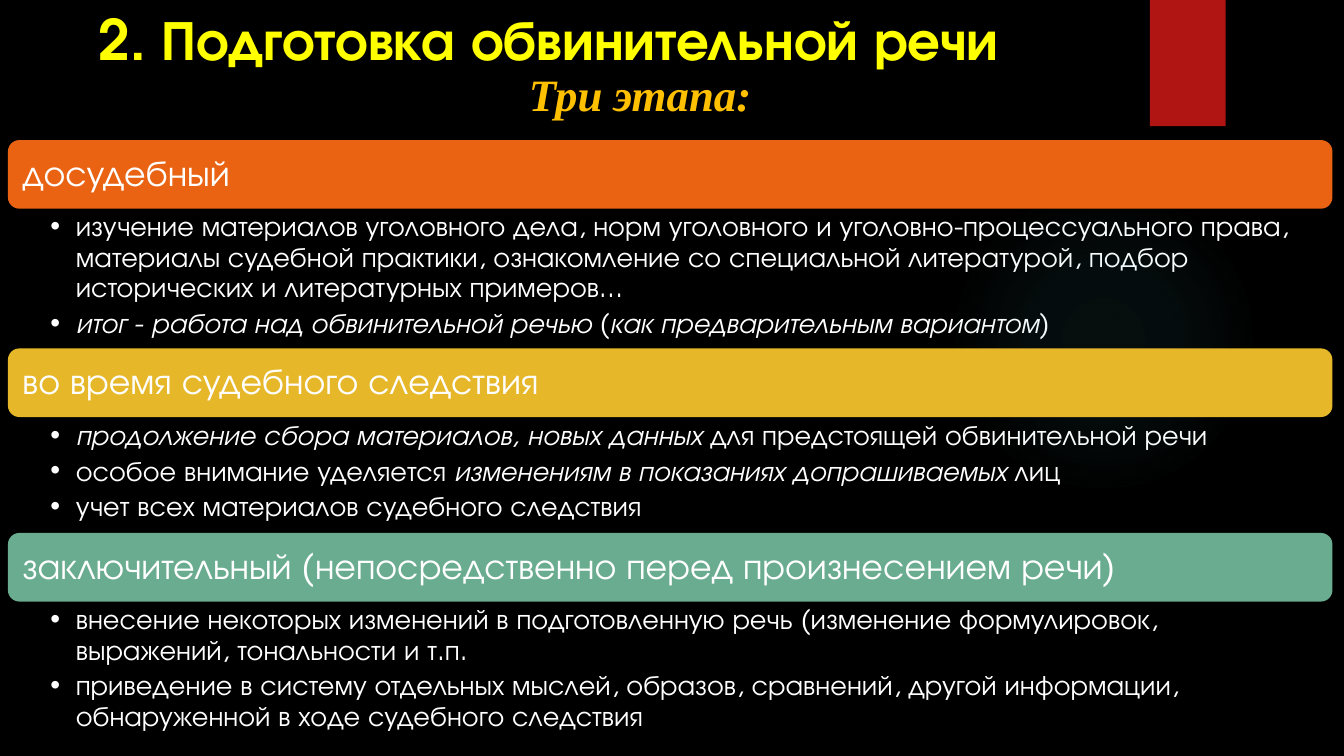
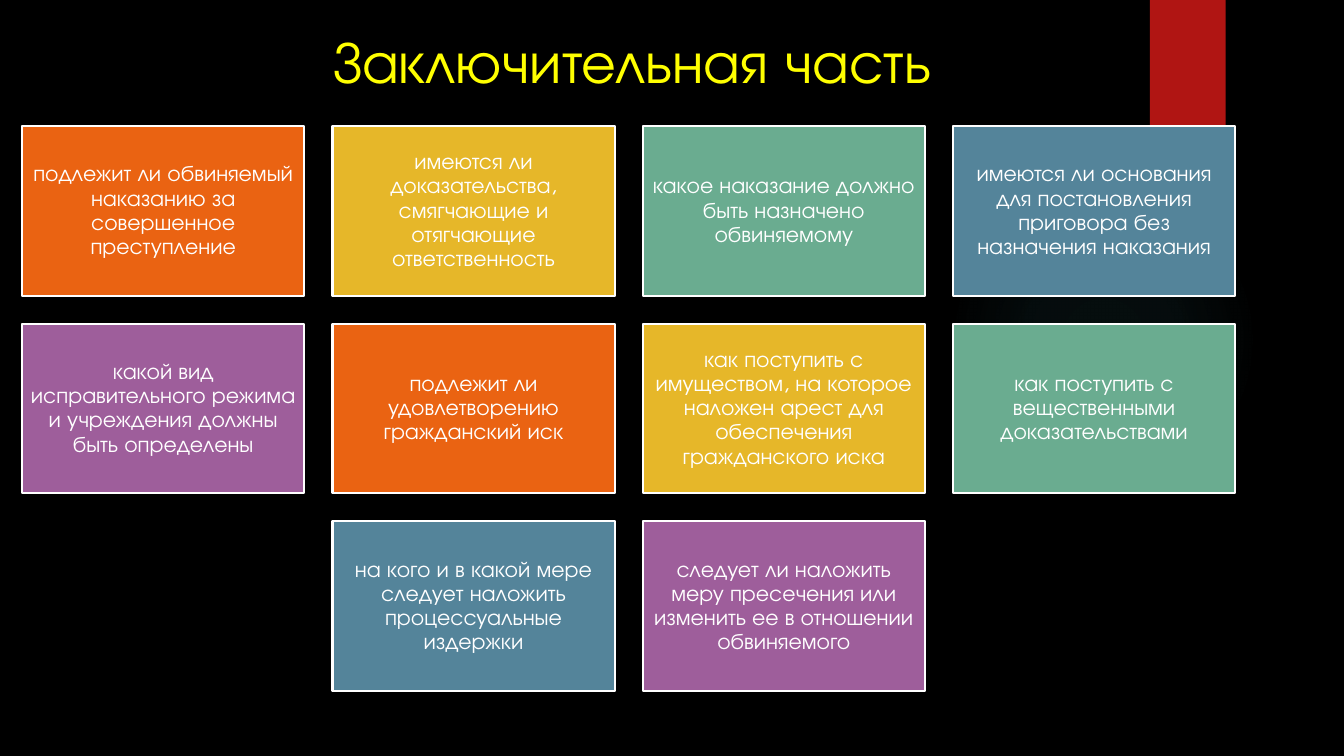
"""Build two slides on preparing and closing a prosecution speech."""
import dataclasses
import itertools
import typing

import pptx
import pptx.dml.color
import pptx.enum.shapes
import pptx.enum.text
import pptx.oxml
import pptx.oxml.ns
import pptx.presentation
import pptx.shapes.autoshape
import pptx.slide
import pptx.text.text
import pptx.util

Cm = pptx.util.Cm
Align = pptx.enum.text.PP_ALIGN
Anchor = pptx.enum.text.MSO_ANCHOR
Preset = pptx.enum.shapes.MSO_SHAPE


@dataclasses.dataclass(frozen=True)
class Theme:
    """Colours, fonts and type sizes of the deck."""
    background: str = "000000"
    text: str = "FFFFFF"
    title: str = "FFFF00"
    subtitle: str = "FFC000"
    ribbon: str = "B01513"
    glow: str = "50B9C1"
    accents: tuple[str, ...] = ("EA6312", "E6B729", "6AAC90", "54849A", "9E5E9B")
    font: str = "TeX Gyre Adventor"
    subtitle_font: str = "Times New Roman"
    subtitle_size: int = 32
    band_size: int = 26
    list_size: int = 20
    cell_size: int = 16


@dataclasses.dataclass(frozen=True)
class Area:
    """Position and size in centimetres."""
    left: float
    top: float
    width: float
    height: float

    def lengths(self) -> tuple[pptx.util.Length, ...]:
        """Return left, top, width and height as lengths."""
        return Cm(self.left), Cm(self.top), Cm(self.width), Cm(self.height)


@dataclasses.dataclass(frozen=True)
class Stage:
    """A stage of work; asterisks enclose the italic spans of its points."""
    name: str
    list_height: float
    placeholder: int
    points: tuple[str, ...]


THEME = Theme()
COMPARISON_LAYOUT = 4
TITLE_LAYOUT = 5
SUBTITLE_PLACEHOLDER = 3
BAND_LEFT, BAND_TOP, BAND_WIDTH, BAND_HEIGHT = 0.2, 3.53, 33.38, 1.73
GRID_LEFT, GRID_TOP, GRID_COLUMNS = 0.56, 3.18, 4
CELL_WIDTH, CELL_HEIGHT, CELL_GAP = 7.11, 4.27, 0.71

STAGES = (
    Stage("досудебный", 3.52, 1, (
        "изучение материалов уголовного дела, норм уголовного и "
        "уголовно-процессуального права, материалы судебной практики, "
        "ознакомление со специальной литературой, подбор исторических и "
        "литературных примеров…",
        "*итог - работа над обвинительной речью (как предварительным вариантом)*",
    )),
    Stage("во время судебного следствия", 2.92, 2, (
        "*продолжение сбора материалов, новых данных* для предстоящей "
        "обвинительной речи",
        "особое внимание уделяется *изменениям в показаниях допрашиваемых* лиц",
        "учет всех материалов судебного следствия",
    )),
    Stage("заключительный (непосредственно перед произнесением речи)", 3.52, 4, (
        "внесение некоторых изменений в подготовленную речь (изменение "
        "формулировок, выражений, тональности и т.п.",
        "приведение в систему отдельных мыслей, образов, сравнений, другой "
        "информации, обнаруженной в ходе судебного следствия",
    )),
)

QUESTIONS = (
    "подлежит ли обвиняемый наказанию за совершенное преступление",
    "имеются ли доказательства, смягчающие и отягчающие ответственность",
    "какое наказание должно быть назначено обвиняемому",
    "имеются ли основания для постановления приговора без назначения наказания",
    "какой вид исправительного режима и учреждения должны быть определены",
    "подлежит ли удовлетворению гражданский иск",
    "как поступить с имуществом, на которое наложен арест для обеспечения "
    "гражданского иска",
    "как поступить с вещественными доказательствами",
    "на кого и в какой мере следует наложить процессуальные издержки",
    "следует ли наложить меру пресечения или изменить ее в отношении обвиняемого",
)


def colour(value: str) -> pptx.dml.color.RGBColor:
    """Turn a hexadecimal value into a colour."""
    return pptx.dml.color.RGBColor.from_string(value)


def style(para: pptx.text.text._Paragraph, size: int, value: str = THEME.text,
          name: str = THEME.font, bold: bool = False,
          italic: typing.Optional[bool] = None) -> None:
    """Set the font of a paragraph."""
    font = para.font
    font.name, font.size, font.bold, font.italic = name, pptx.util.Pt(size), bold, italic
    font.color.rgb = colour(value)


def set_frame(frame: pptx.text.text.TextFrame, anchor: Anchor,
              left: float, top: float, right: float, bottom: float) -> None:
    """Set the anchor and the insets of a text frame."""
    frame.auto_size = pptx.enum.text.MSO_AUTO_SIZE.NONE
    frame.word_wrap = True
    frame.vertical_anchor = anchor
    frame.margin_left, frame.margin_top = Cm(left), Cm(top)
    frame.margin_right, frame.margin_bottom = Cm(right), Cm(bottom)


def place(box: pptx.shapes.autoshape.Shape, area: Area) -> None:
    """Move and resize a placeholder."""
    box.left, box.top, box.width, box.height = area.lengths()


def add_block(page: pptx.slide.Slide, preset: Preset, area: Area,
              fill: str) -> pptx.shapes.autoshape.Shape:
    """Add a filled shape with neither outline nor shadow."""
    box = page.shapes.add_shape(preset, *area.lengths())
    box.shadow.inherit = False
    box.fill.solid()
    box.fill.fore_color.rgb = colour(fill)
    box.line.fill.background()
    return box


def add_label(box: pptx.shapes.autoshape.Shape, text: str, size: int,
              align: Align, inset: float) -> None:
    """Write one paragraph into a shape."""
    set_frame(box.text_frame, Anchor.MIDDLE, inset, inset, inset, inset)
    para = box.text_frame.paragraphs[0]
    para.text, para.alignment, para.line_spacing = text, align, 0.9
    style(para, size)


def add_glow(page: pptx.slide.Slide) -> None:
    """Add the faint round light of the background."""
    box = add_block(page, Preset.OVAL, Area(23.9, 4.65, 7.82, 7.82), THEME.glow)
    stops = "".join(
        f'<a:gs pos="{position}000"><a:srgbClr val="{THEME.glow}">'
        f'<a:alpha val="{alpha}000"/></a:srgbClr></a:gs>'
        for position, alpha in ((0, 7), (36, 6), (69, 0)))
    gradient = pptx.oxml.parse_xml(
        f'<a:gradFill {pptx.oxml.ns.nsdecls("a")}><a:gsLst>{stops}</a:gsLst>'
        '<a:path path="circle"><a:fillToRect l="50000" t="50000" r="50000" '
        'b="50000"/></a:path></a:gradFill>')
    properties = box.element.spPr
    properties.replace(properties.find(pptx.oxml.ns.qn("a:solidFill")), gradient)


def add_page(deck: pptx.presentation.Presentation, layout: int, title: str,
             area: Area, size: int, align: Align, bold: bool) -> pptx.slide.Slide:
    """Add a slide with the shared decoration and its title."""
    page = deck.slides.add_slide(deck.slide_layouts[layout])
    add_glow(page)
    add_block(page, Preset.RECTANGLE, Area(28.98, 0, 1.91, 3.18), THEME.ribbon)
    box = page.shapes.title
    place(box, area)
    set_frame(box.text_frame, Anchor.MIDDLE, 0.25, 0.13, 0.25, 0.13)
    para = box.text_frame.paragraphs[0]
    para.text, para.alignment = title, align
    style(para, size, THEME.title, bold=bold)
    return page


def add_bullet(para: pptx.text.text._Paragraph) -> None:
    """Give a paragraph a hanging round bullet."""
    properties = para._p.get_or_add_pPr()
    properties.set("marL", str(Cm(0.64)))
    properties.set("indent", str(-Cm(0.64)))
    for markup in ('buFont {} typeface="Arial"', 'buChar {} char="•"'):
        tag = markup.format(pptx.oxml.ns.nsdecls("a"))
        properties.append(pptx.oxml.parse_xml(f"<a:{tag}/>"))


def fill_list(box: pptx.shapes.autoshape.Shape, points: tuple[str, ...]) -> None:
    """Write bulleted points into a body placeholder."""
    frame = box.text_frame
    set_frame(frame, Anchor.TOP, 1.07, 0.1, 0.51, 0.1)
    for index, point in enumerate(points):
        para = frame.add_paragraph() if index else frame.paragraphs[0]
        para.line_spacing = 0.9
        para.space_before, para.space_after = pptx.util.Pt(0), pptx.util.Pt(4)
        add_bullet(para)
        style(para, THEME.list_size)
        for text, italic in zip(point.split("*"), itertools.cycle((False, True))):
            if text:
                span = para.add_run()
                span.text, span.font.italic = text, italic


def add_stages_page(deck: pptx.presentation.Presentation) -> None:
    """Build the slide with the three stages."""
    page = add_page(deck, COMPARISON_LAYOUT, "2. Подготовка обвинительной речи",
                    Area(2.24, 0, 26.14, 1.93), 40, Align.LEFT, True)
    bodies = {box.placeholder_format.idx: box for box in page.placeholders}
    top = BAND_TOP
    for stage, accent in zip(STAGES, THEME.accents):
        band = add_block(page, Preset.ROUNDED_RECTANGLE,
                         Area(BAND_LEFT, top, BAND_WIDTH, BAND_HEIGHT), accent)
        add_label(band, stage.name, THEME.band_size, Align.LEFT, 0.28)
        top += BAND_HEIGHT
        body = bodies[stage.placeholder]
        place(body, Area(BAND_LEFT, top, BAND_WIDTH, stage.list_height))
        fill_list(body, stage.points)
        top += stage.list_height
    subtitle = bodies[SUBTITLE_PLACEHOLDER]
    place(subtitle, Area(13.08, 1.55, 6.17, 1.63))
    set_frame(subtitle.text_frame, Anchor.TOP, 0.25, 0.13, 0.25, 0.13)
    subtitle.text_frame.word_wrap = False
    para = subtitle.text_frame.paragraphs[0]
    para.text, para.space_before = "Три этапа:", pptx.util.Pt(0)
    style(para, THEME.subtitle_size, THEME.subtitle, THEME.subtitle_font, True, True)


def add_questions_page(deck: pptx.presentation.Presentation) -> None:
    """Build the slide with the grid of questions."""
    page = add_page(deck, TITLE_LAYOUT, "Заключительная часть",
                    Area(7.44, 0.51, 16.99, 1.98), 42, Align.CENTER, False)
    for index, question in enumerate(QUESTIONS):
        row, column = divmod(index, GRID_COLUMNS)
        row_count = min(GRID_COLUMNS, len(QUESTIONS) - row * GRID_COLUMNS)
        shift = column + (GRID_COLUMNS - row_count) / 2
        area = Area(GRID_LEFT + shift * (CELL_WIDTH + CELL_GAP),
                    GRID_TOP + row * (CELL_HEIGHT + CELL_GAP),
                    CELL_WIDTH, CELL_HEIGHT)
        cell = add_block(page, Preset.RECTANGLE, area,
                         THEME.accents[index % len(THEME.accents)])
        cell.line.color.rgb = colour(THEME.text)
        cell.line.width = pptx.util.Pt(1.5)
        add_label(cell, question, THEME.cell_size, Align.CENTER, 0.18)


def main() -> None:
    """Build and save the deck."""
    deck = pptx.Presentation()
    deck.slide_width, deck.slide_height = Cm(33.87), Cm(19.05)
    backdrop = deck.slide_master.background.fill
    backdrop.solid()
    backdrop.fore_color.rgb = colour(THEME.background)
    add_stages_page(deck)
    add_questions_page(deck)
    deck.save("out.pptx")


if __name__ == "__main__":
    main()
